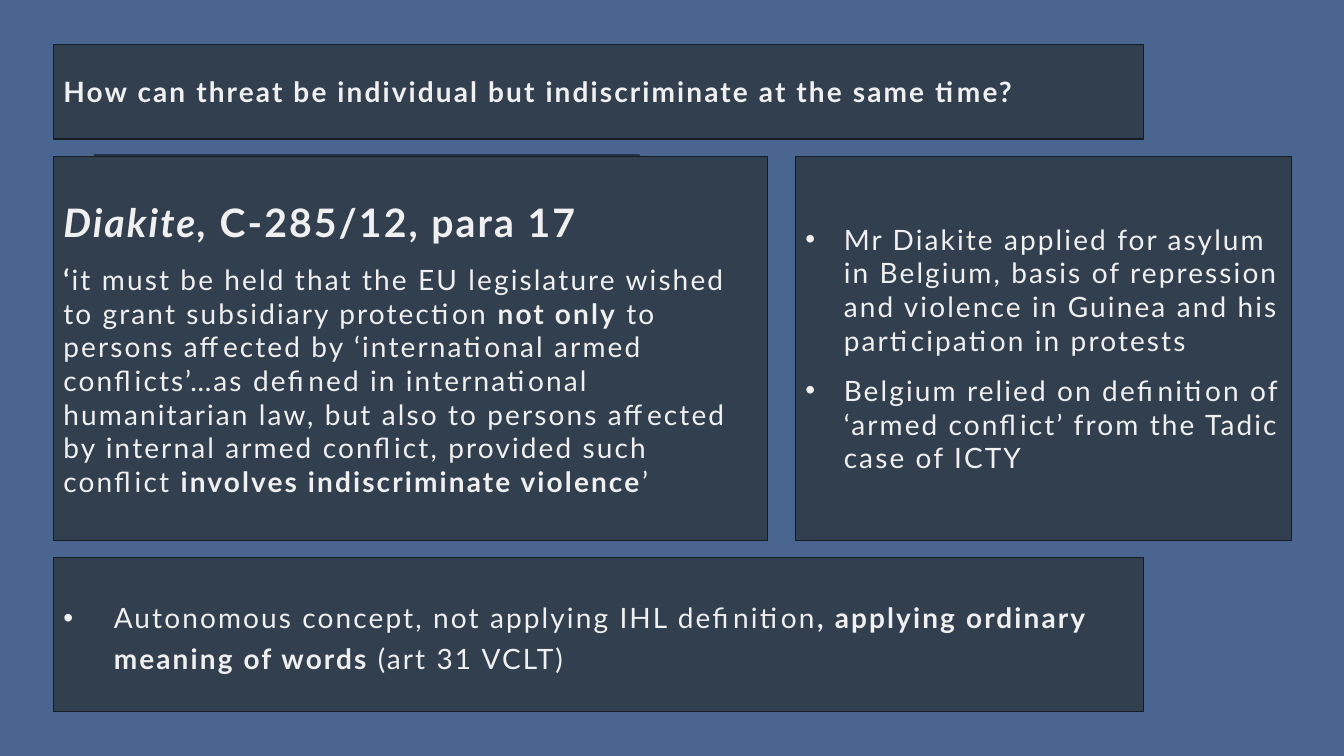
from lxml import etree
from pptx import Presentation
from pptx.dml.color import RGBColor
from pptx.enum.shapes import MSO_SHAPE
from pptx.enum.text import MSO_ANCHOR, PP_ALIGN
from pptx.oxml.ns import qn
from pptx.util import Inches, Pt

RECT = MSO_SHAPE.RECTANGLE
MIDDLE = MSO_ANCHOR.MIDDLE
LEFT = PP_ALIGN.LEFT

BLUE = RGBColor(0x4A, 0x65, 0x90)
NAVY = RGBColor(0x25, 0x32, 0x48)
SLATE = RGBColor(0x32, 0x3F, 0x4F)
EDGE = RGBColor(0x16, 0x1C, 0x23)
PALE = RGBColor(0xF1, 0xF0, 0xF0)

MARGIN = 0.53
WIDE = 10.81
MID_TOP, MID_HIGH = 1.55, 3.81


def add_panel(slide, left, top, width, height):
    """Draw a dark box and return its text frame."""
    box = slide.shapes.add_shape(
        RECT, Inches(left), Inches(top), Inches(width), Inches(height))
    box.shadow.inherit = False
    box.fill.solid()
    box.fill.fore_color.rgb = SLATE
    box.line.color.rgb = EDGE
    box.line.width = Pt(1)
    frame = box.text_frame
    frame.word_wrap = True
    frame.vertical_anchor = MIDDLE
    return frame


def add_para(frame, first=False, before=0, lines=None, indent=0):
    """Start a paragraph; an indent in inches gives it a bullet."""
    para = frame.paragraphs[0] if first else frame.add_paragraph()
    para.alignment = LEFT
    para.space_before = Pt(before)
    if lines:
        para.line_spacing = lines
    if indent:
        props = para._p.get_or_add_pPr()
        props.set("marL", str(Inches(indent)))
        props.set("indent", str(-Inches(indent)))
        font = etree.SubElement(props, qn("a:buFont"))
        font.set("typeface", "Arial")
        etree.SubElement(props, qn("a:buChar")).set("char", "•")
    return para


def add_run(para, text, size=20, bold=False, italic=False):
    run = para.add_run()
    run.text = text
    font = run.font
    font.name = "Lato"
    font.size = Pt(size)
    font.bold = bold
    font.italic = italic
    font.color.rgb = PALE
    run._r.get_or_add_rPr().set("spc", "150")


def add_back(slide, left, top, width, height):
    """Draw the cut-corner plate behind the quote."""
    right, low = left + width, top + height
    points = [(right - 0.74, top), (right, top + 1.06), (right, low), (left, low)]
    pen = slide.shapes.build_freeform(Inches(left), Inches(top))
    pen.add_line_segments([(Inches(x), Inches(y)) for x, y in points])
    plate = pen.convert_to_shape()
    plate.shadow.inherit = False
    plate.fill.solid()
    plate.fill.fore_color.rgb = NAVY
    plate.line.fill.background()


def add_title(slide, *box):
    para = add_para(add_panel(slide, *box), first=True)
    add_run(para, "How can threat be individual but indiscriminate at the same time?",
            bold=True)


def add_quote(slide, *box):
    frame = add_panel(slide, *box)
    head = add_para(frame, first=True, before=12)
    add_run(head, "Diakite, ", size=28, bold=True, italic=True)
    add_run(head, "C-285/12, para 17", size=28, bold=True)
    body = add_para(frame, before=12)
    for text, bold in [
        ("‘", True),
        ("it must be held that the EU legislature wished to grant "
         "subsidiary protection ", False),
        ("not only", True),
        (" to persons affected by ‘international armed conflicts’…as defined in "
         "international humanitarian law, but also to persons affected by internal "
         "armed conflict, provided such conflict ", False),
        ("involves indiscriminate violence", True),
        ("’", False),
    ]:
        add_run(body, text, bold=bold)


def add_facts(slide, *box):
    frame = add_panel(slide, *box)
    facts = [
        "Mr Diakite applied for asylum in Belgium, basis of repression and "
        "violence in Guinea and his participation in protests",
        "Belgium relied on definition of ‘armed conflict’ from the Tadic case of ICTY",
    ]
    for i, fact in enumerate(facts):
        add_run(add_para(frame, first=i == 0, before=12, indent=0.38), fact)


def add_result(slide, *box):
    para = add_para(add_panel(slide, *box), first=True, lines=1.2, indent=0.5)
    add_run(para, "Autonomous concept, not applying IHL definition")
    add_run(para, ", applying ordinary meaning of words ", bold=True)
    add_run(para, "(art 31 VCLT)")


def main():
    deck = Presentation()
    deck.slide_width = Inches(13.33)
    deck.slide_height = Inches(7.5)
    slide = deck.slides.add_slide(deck.slide_layouts[6])
    slide.background.fill.solid()
    slide.background.fill.fore_color.rgb = BLUE

    add_back(slide, 0.93, 1.53, 6.15, 3.15)
    add_quote(slide, MARGIN, MID_TOP, 7.08, MID_HIGH)
    add_title(slide, MARGIN, 0.44, WIDE, 0.94)
    add_result(slide, MARGIN, 5.53, WIDE, 1.53)
    add_facts(slide, 7.89, MID_TOP, 4.92, MID_HIGH)
    deck.save("out.pptx")


if __name__ == "__main__":
    main()
